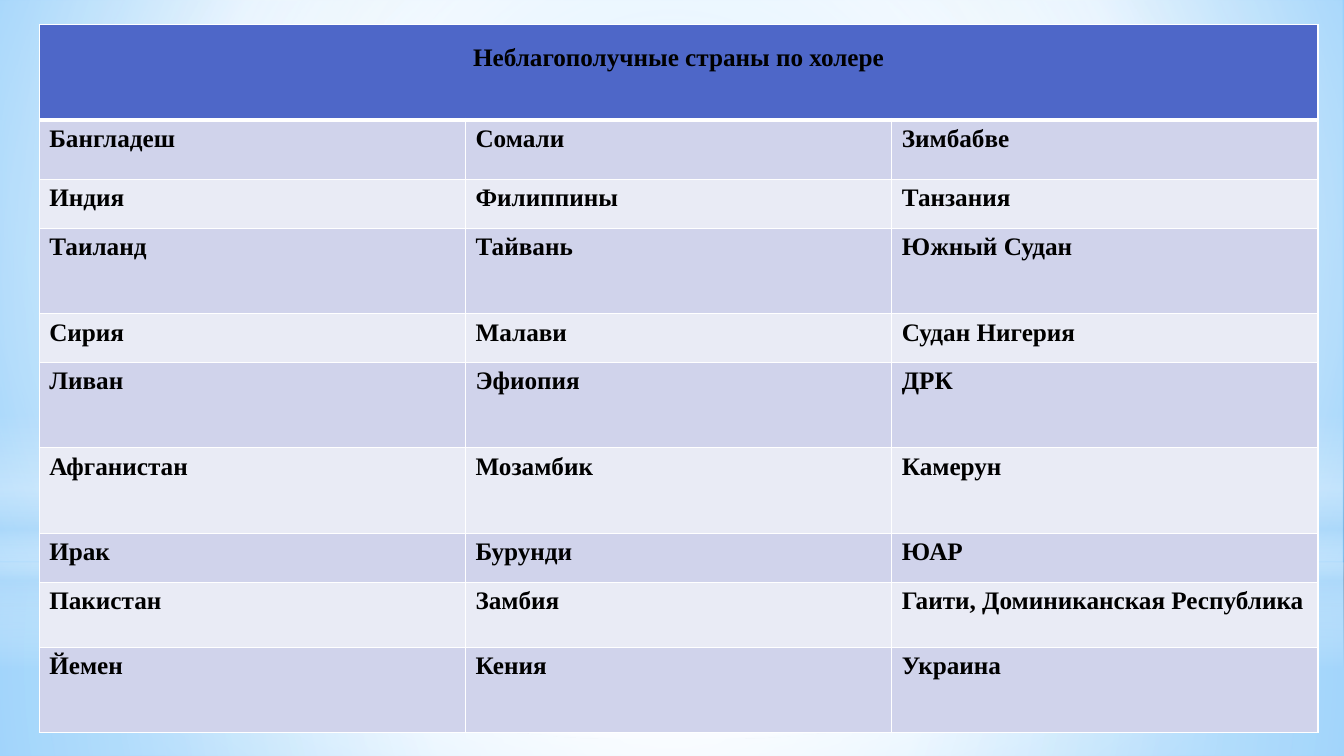
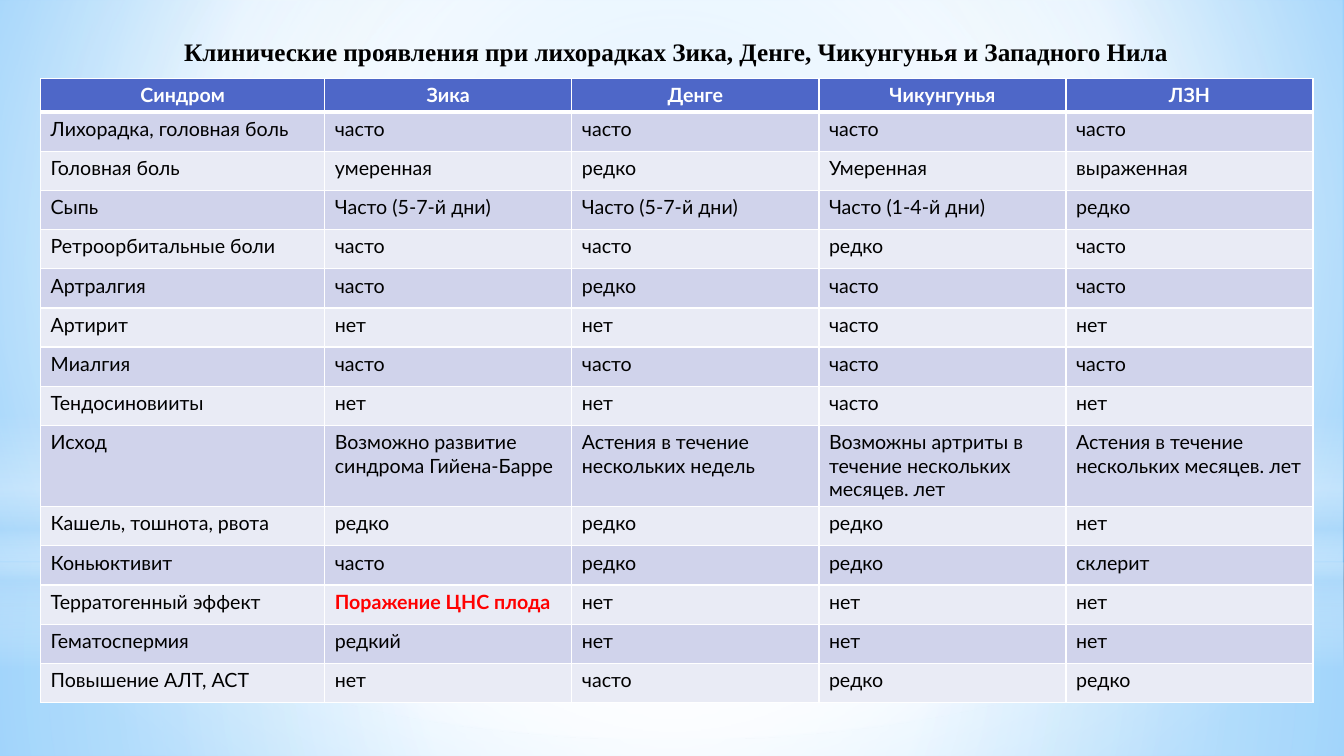
from lxml.etree import SubElement as Sub
from pptx import Presentation as Deck
from pptx.dml.color import RGBColor as RGB
from pptx.enum.shapes import MSO_SHAPE as Kind
from pptx.enum.text import MSO_ANCHOR as Anchor, MSO_AUTO_SIZE as Auto, PP_ALIGN as Align
from pptx.oxml.ns import qn
from pptx.util import Emu, Pt

SCALE = 6350
BLACK = RGB(0x00, 0x00, 0x00)
WHITE = RGB(0xFF, 0xFF, 0xFF)
RED = RGB(0xFF, 0x00, 0x00)
INDIGO = RGB(0x4E, 0x67, 0xC8)
LILAC = RGB(0xD0, 0xD3, 0xEB)
PALE = RGB(0xE9, 0xEB, 0xF5)
SKY = RGB(0x9E, 0xD5, 0xFF)
AZURE = RGB(0x5B, 0xB9, 0xFF)
MIST = RGB(0xB4, 0xDC, 0xFA)

SERIF = {"name": "Times New Roman", "size": Pt(18), "bold": True}
HEAD = {"name": "Lato", "size": Pt(14), "bold": True}
BODY = {**HEAD, "bold": False}
MID = (50, 50, 50, 50)

BACK = [(0, SKY, 100), (60, WHITE, 100), (100, AZURE, 100)]
GLOWS = [
    (Kind.RECTANGLE, (0, 804, 1920, 276), MID,
     [(0, WHITE, 91), (37, WHITE, 76), (100, MIST, 79)]),
    (Kind.RECTANGLE, (0, 0, 1920, 804), MID,
     [(0, WHITE, 89), (48, WHITE, 62), (100, MIST, 79)]),
    (Kind.RECTANGLE, (0, 593, 1920, 360), None,
     [(0, WHITE, 0), (29, WHITE, 30), (45, MIST, 40),
      (55, WHITE, 26), (65, MIST, 60), (100, WHITE, 0)]),
    (Kind.OVAL, (0, 252, 1920, 804), MID,
     [(0, WHITE, 100), (56, WHITE, 0)]),
]

LANDS = [
    ("Неблагополучные страны по холере", "", ""),
    ("Бангладеш", "Сомали", "Зимбабве"),
    ("Индия", "Филиппины", "Танзания"),
    ("Таиланд", "Тайвань", "Южный Судан"),
    ("Сирия", "Малави", "Судан Нигерия"),
    ("Ливан", "Эфиопия", "ДРК"),
    ("Афганистан", "Мозамбик", "Камерун"),
    ("Ирак", "Бурунди", "ЮАР"),
    ("Пакистан", "Замбия", "Гаити, Доминиканская Республика"),
    ("Йемен", "Кения", "Украина"),
]
SIGNS = [
    ("Синдром", "Зика", "Денге", "Чикунгунья", "ЛЗН"),
    ("Лихорадка, головная боль", "часто", "часто", "часто", "часто"),
    ("Головная боль", "умеренная", "редко", "Умеренная", "выраженная"),
    ("Сыпь", "Часто (5-7-й дни)", "Часто (5-7-й дни)", "Часто (1-4-й дни)", "редко"),
    ("Ретроорбитальные боли", "часто", "часто", "редко", "часто"),
    ("Артралгия", "часто", "редко", "часто", "часто"),
    ("Артирит", "нет", "нет", "часто", "нет"),
    ("Миалгия", "часто", "часто", "часто", "часто"),
    ("Тендосиновииты", "нет", "нет", "часто", "нет"),
    ("Исход", "Возможно развитие синдрома Гийена-Барре",
     "Астения в течение нескольких недель",
     "Возможны артриты в течение нескольких месяцев. лет",
     "Астения в течение нескольких месяцев. лет"),
    ("Кашель, тошнота, рвота", "редко", "редко", "редко", "нет"),
    ("Коньюктивит", "часто", "редко", "редко", "склерит"),
    ("Терратогенный эффект", "Поражение ЦНС плода", "нет", "нет", "нет"),
    ("Гематоспермия", "редкий", "нет", "нет", "нет"),
    ("Повышение АЛТ, АСТ", "нет", "часто", "редко", "редко"),
]


def px(*sizes):
    return [Emu(size * SCALE) for size in sizes]


class Show:
    def __init__(self):
        self.deck = Deck()
        self.deck.slide_width, self.deck.slide_height = px(1920, 1080)
        self.slide = None

    def page(self, kind):
        self.slide = self.deck.slides.add_slide(self.deck.slide_layouts[kind])

    def blend(self, fill, owner, stops, focus):
        fill.gradient()
        grad = owner.find(qn("a:gradFill"))
        for child in list(grad):
            grad.remove(child)
        group = Sub(grad, qn("a:gsLst"))
        for place, color, alpha in stops:
            stop = Sub(group, qn("a:gs"), pos=str(place * 1000))
            tone = Sub(stop, qn("a:srgbClr"), val=str(color))
            if alpha < 100:
                Sub(tone, qn("a:alpha"), val=str(alpha * 1000))
        if focus:
            route = Sub(grad, qn("a:path"), {"path": "circle"})
            Sub(route, qn("a:fillToRect"),
                {side: str(part * 1000) for side, part in zip("ltrb", focus)})
        else:
            Sub(grad, qn("a:lin"), ang="5400000", scaled="0")

    def base(self):
        master = self.deck.slide_master
        fill = master.background.fill
        owner = master.element.find(".//" + qn("p:bgPr"))
        self.blend(fill, owner, BACK, (20, 10, 20, 60))
        for rank, (kind, box, focus, stops) in enumerate(GLOWS):
            glow = self.slide.shapes.add_shape(kind, *px(*box))
            glow.shadow.inherit = False
            glow.line.fill.background()
            self.blend(glow.fill, glow.element.spPr, stops, focus)
            glow.element.nvSpPr.cNvPr.id = 50 + rank
            master.shapes.element.insert(2 + rank, glow.element)

    def label(self, frame, text, form, color, align):
        para = frame.paragraphs[0]
        para.alignment = align
        run = para.add_run()
        run.text = text
        for key, value in form.items():
            setattr(run.font, key, value)
        run.font.color.rgb = color

    def title(self, text, box):
        title = self.slide.shapes.title
        title.left, title.top, title.width, title.height = px(*box)
        frame = title.text_frame
        frame.word_wrap = True
        frame.auto_size = Auto.SHAPE_TO_FIT_TEXT
        self.label(frame, text, SERIF, BLACK, Align.CENTER)

    def edge(self, cell, row):
        props = cell._tc.get_or_add_tcPr()
        sides = {"L": 1, "R": 1, "T": 3 if row == 1 else 1, "B": 1 if row else 3}
        for rank, (side, width) in enumerate(sides.items()):
            line = Sub(props, qn("a:ln" + side), w=str(int(Pt(width))))
            solid = Sub(line, qn("a:solidFill"))
            Sub(solid, qn("a:srgbClr"), val=str(WHITE))
            props.insert(rank, line)

    def table(self, spot, cols, rows, data, head, body, ink, marks=()):
        box = px(*spot, sum(cols), sum(rows))
        table = self.slide.shapes.add_table(len(rows), len(cols), *box).table
        table.horz_banding = False
        for col, width in zip(table.columns, px(*cols)):
            col.width = width
        for row, height in zip(table.rows, px(*rows)):
            row.height = height
        for r, line in enumerate(data):
            for c, text in enumerate(line):
                cell = table.cell(r, c)
                cell.fill.solid()
                cell.fill.fore_color.rgb = (LILAC if r % 2 else PALE) if r else INDIGO
                self.edge(cell, r)
                if not text:
                    continue
                form, color = (body, BLACK) if r else (head, ink)
                if (r, c) in marks:
                    form, color = head, RED
                align = Align.LEFT if r else Align.CENTER
                self.label(cell.text_frame, text, form, color, align)
        return table


def main():
    show = Show()
    show.page(6)
    show.base()
    rows = [136, 85, 70, 122, 70, 122, 122, 70, 93, 122]
    lands = show.table((56, 35), [609] * 3, rows, LANDS, SERIF, SERIF, BLACK)
    head = lands.cell(0, 0)
    head.merge(lands.cell(0, 2))
    head.vertical_anchor = Anchor.MIDDLE
    head.margin_bottom = px(48)[0]

    show.page(5)
    show.title("Клинические проявления при лихорадках Зика, Денге, Чикунгунья и Западного Нила",
               (82, 45, 1768, 58))
    rows = [48] + [56] * 8 + [116] + [56] * 5
    show.table((58, 112), [406] + [353] * 4, rows, SIGNS, HEAD, BODY, WHITE, {(12, 1)})
    show.deck.save("out.pptx")


if __name__ == "__main__":
    main()
